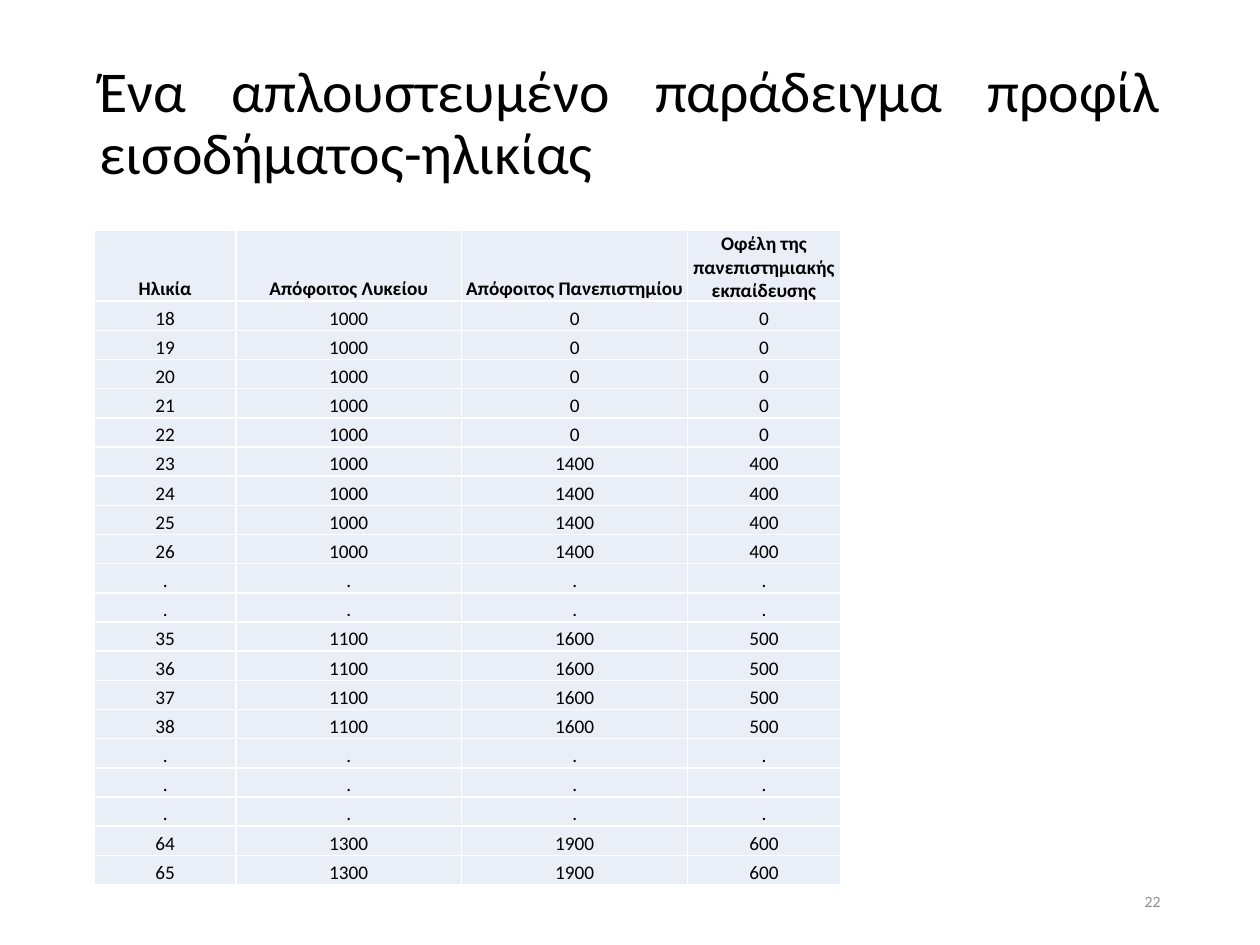
from dataclasses import dataclass

from lxml.etree import SubElement
from pptx import Presentation
from pptx.dml.color import RGBColor
from pptx.enum.text import MSO_ANCHOR, PP_ALIGN
from pptx.oxml.ns import qn
from pptx.util import Inches, Pt


@dataclass(frozen=True)
class Theme:
    font: str = "Calibri"
    ink: str = "000000"
    muted: str = "8C8C8C"
    cell_fill: str = "EAEFF7"
    border: str = "FFFFFF"
    title_size: int = 33
    table_size: int = 11
    number_size: int = 9


THEME = Theme()

HEADINGS = (
    "Ηλικία",
    "Απόφοιτος Λυκείου",
    "Απόφοιτος Πανεπιστημίου",
    "Οφέλη της πανεπιστημιακής εκπαίδευσης",
)
COLUMN_WIDTHS = (1.12, 1.79, 1.79, 1.21)
HEADING_HEIGHT = 0.56


def income_rows():
    """Ages with school income, university income and their difference; dots mark skipped ages."""
    def band(ages, school, university, benefit):
        return [(age, school, university, benefit) for age in ages]

    def gap(count):
        return [(".",) * len(HEADINGS)] * count

    return (
        band(range(18, 23), 1000, 0, 0)
        + band(range(23, 27), 1000, 1400, 400)
        + gap(2)
        + band(range(35, 39), 1100, 1600, 500)
        + gap(3)
        + band(range(64, 66), 1300, 1900, 600)
    )


def style_paragraph(paragraph, size, color, alignment, bold=False):
    paragraph.alignment = alignment
    font = paragraph.font
    font.name = THEME.font
    font.size = Pt(size)
    font.bold = bold
    font.color.rgb = RGBColor.from_string(color)


def add_text(slide, box, text, size, color, alignment, line_spacing=1.0):
    frame = slide.shapes.add_textbox(*map(Inches, box)).text_frame
    frame.word_wrap = True
    frame.vertical_anchor = MSO_ANCHOR.MIDDLE
    paragraph = frame.paragraphs[0]
    paragraph.text = text
    paragraph.line_spacing = line_spacing
    style_paragraph(paragraph, size, color, alignment)


def add_borders(cell):
    properties = cell._tc.get_or_add_tcPr()
    for position, side in enumerate(("lnL", "lnR", "lnT", "lnB")):
        line = SubElement(properties, qn(f"a:{side}"), w=str(Pt(1)))
        fill = SubElement(line, qn("a:solidFill"))
        SubElement(fill, qn("a:srgbClr"), val=THEME.border)
        properties.insert(position, line)


def fill_cell(cell, value, bold):
    cell.margin_left = cell.margin_right = cell.margin_top = Inches(0.01)
    cell.margin_bottom = 0
    cell.vertical_anchor = MSO_ANCHOR.BOTTOM
    cell.fill.solid()
    cell.fill.fore_color.rgb = RGBColor.from_string(THEME.cell_fill)
    add_borders(cell)
    paragraph = cell.text_frame.paragraphs[0]
    paragraph.text = str(value)
    style_paragraph(paragraph, THEME.table_size, THEME.ink, PP_ALIGN.CENTER, bold)


def add_income_table(slide, box):
    rows = [HEADINGS] + income_rows()
    table = slide.shapes.add_table(len(rows), len(HEADINGS), *map(Inches, box)).table
    table.horz_banding = False

    for column, share in zip(table.columns, COLUMN_WIDTHS):
        column.width = Inches(box[2] * share / sum(COLUMN_WIDTHS))
    row_height = (box[3] - HEADING_HEIGHT) / (len(rows) - 1)
    for index, (row, values) in enumerate(zip(table.rows, rows)):
        is_heading = index == 0
        row.height = Inches(HEADING_HEIGHT if is_heading else row_height)
        for cell, value in zip(row.cells, values):
            fill_cell(cell, value, bold=is_heading)


def main():
    presentation = Presentation()
    presentation.slide_width = Inches(10)
    presentation.slide_height = Inches(7.5)
    slide = presentation.slides.add_slide(presentation.slide_layouts[6])

    add_text(slide, (0.69, 0.4, 8.62, 1.18),
             "Ένα απλουστευμένο παράδειγμα προφίλ εισοδήματος-ηλικίας",
             THEME.title_size, THEME.ink, PP_ALIGN.JUSTIFY, line_spacing=0.9)
    add_income_table(slide, (0.75, 1.83, 5.92, 5.19))
    add_text(slide, (7.06, 6.95, 2.25, 0.4), "22",
             THEME.number_size, THEME.muted, PP_ALIGN.RIGHT)

    presentation.save("out.pptx")


if __name__ == "__main__":
    main()
